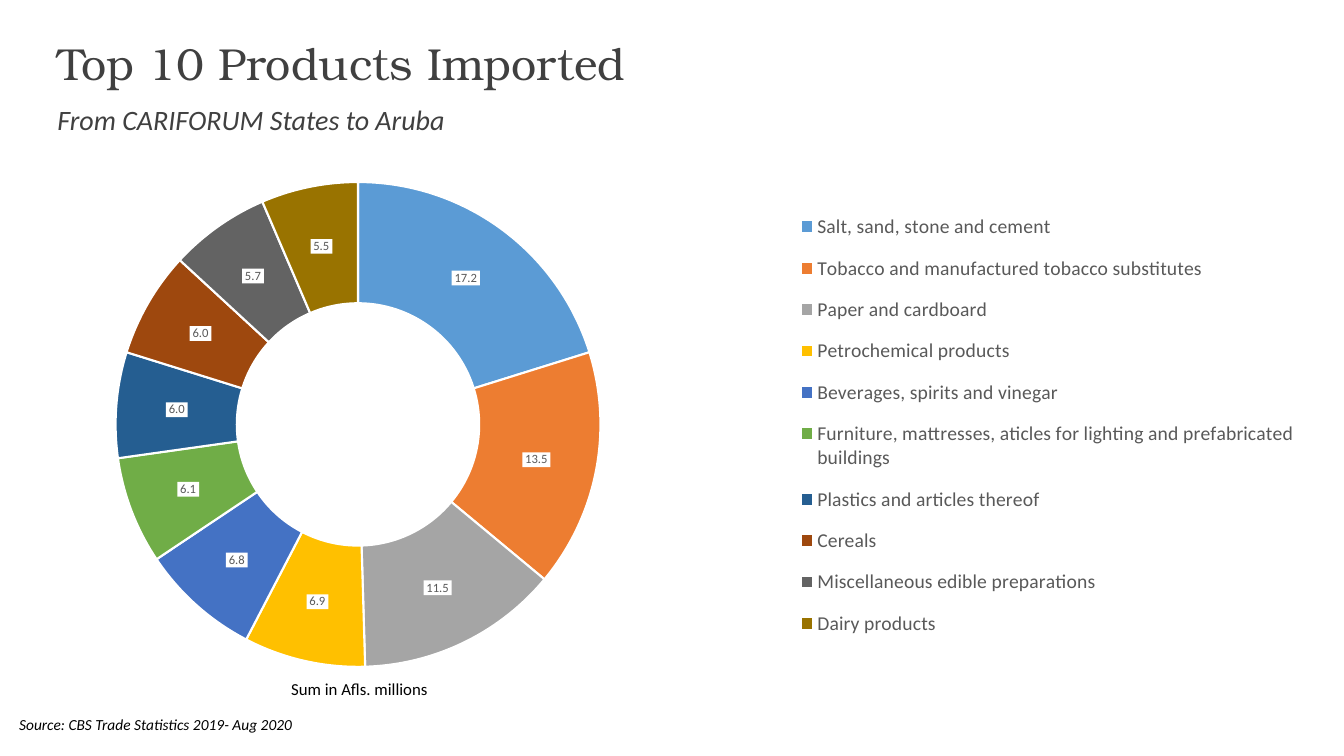
from dataclasses import dataclass

import lxml.etree
import pptx
import pptx.chart.chart
import pptx.chart.data
import pptx.dml.color
import pptx.enum.chart
import pptx.enum.text
import pptx.oxml
import pptx.oxml.ns
import pptx.slide
import pptx.text.text
import pptx.util

Pt = pptx.util.Pt
RGBColor = pptx.dml.color.RGBColor

BLACK = RGBColor(0x00, 0x00, 0x00)
WHITE = RGBColor(0xFF, 0xFF, 0xFF)
DARK_GREY = RGBColor(0x40, 0x40, 0x40)
MID_GREY = RGBColor(0x59, 0x59, 0x59)
BODY_FONT = "Calibri"
TITLE_FONT = "TeX Gyre Bonum"
MILLIONS_FORMAT = r'_(* #,##0.0_);_(* \(#,##0.0\);_(* "-"??_);_(@_)'


@dataclass(frozen=True)
class Product:
    name: str
    millions: float
    color: RGBColor


@dataclass(frozen=True)
class Caption:
    text: str
    left: float
    top: float
    width: float
    height: float
    size: float
    color: RGBColor
    italic: bool = True
    inset_x: float = 0
    inset_y: float = 0


PRODUCTS = [
    Product("Salt, sand, stone and cement", 17.2, RGBColor(0x5B, 0x9B, 0xD5)),
    Product("Tobacco and manufactured tobacco substitutes", 13.5, RGBColor(0xED, 0x7D, 0x31)),
    Product("Paper and cardboard", 11.5, RGBColor(0xA5, 0xA5, 0xA5)),
    Product("Petrochemical products", 6.9, RGBColor(0xFF, 0xC0, 0x00)),
    Product("Beverages, spirits and vinegar", 6.8, RGBColor(0x44, 0x72, 0xC4)),
    Product("Furniture, mattresses, aticles for lighting and prefabricated buildings",
            6.1, RGBColor(0x70, 0xAD, 0x47)),
    Product("Plastics and articles thereof", 6, RGBColor(0x25, 0x5E, 0x91)),
    Product("Cereals", 6, RGBColor(0x9E, 0x48, 0x0E)),
    Product("Miscellaneous edible preparations", 5.7, RGBColor(0x63, 0x63, 0x63)),
    Product("Dairy products", 5.5, RGBColor(0x99, 0x73, 0x00)),
]

CAPTIONS = [
    Caption("From CARIFORUM States to Aruba", 41, 73.4, 291, 34, 20, DARK_GREY),
    Caption("Source: CBS Trade Statistics 2019- Aug 2020", 13.7, 510.5, 379, 18, 11, BLACK),
    Caption("Sum in Afls. millions", 200.9, 481, 191.5, 21.6, 12, BLACK,
            italic=False, inset_x=7.2, inset_y=3.6),
]


def style_font(font: pptx.text.text.Font, size: float, color: RGBColor,
               name: str = BODY_FONT) -> None:
    font.name = name
    font.size = Pt(size)
    font.color.rgb = color


def add_title(slide: pptx.slide.Slide) -> None:
    title = slide.shapes.title
    title.left, title.top, title.width, title.height = Pt(34), Pt(34), Pt(893), Pt(34)
    frame = title.text_frame
    frame.vertical_anchor = pptx.enum.text.MSO_ANCHOR.BOTTOM
    frame.auto_size = pptx.enum.text.MSO_AUTO_SIZE.NONE
    heading = frame.paragraphs[0]
    heading.alignment = pptx.enum.text.PP_ALIGN.LEFT
    heading.line_spacing = 0.9
    run = heading.add_run()
    run.text = "Top 10 Products Imported"
    style_font(run.font, 32, DARK_GREY, TITLE_FONT)


def add_caption(slide: pptx.slide.Slide, caption: Caption) -> None:
    frame = slide.shapes.add_textbox(Pt(caption.left), Pt(caption.top),
                                     Pt(caption.width), Pt(caption.height)).text_frame
    frame.word_wrap = True
    frame.margin_left = frame.margin_right = Pt(caption.inset_x)
    frame.margin_top = frame.margin_bottom = Pt(caption.inset_y)
    run = frame.paragraphs[0].add_run()
    run.text = caption.text
    run.font.italic = caption.italic
    style_font(run.font, caption.size, caption.color)


def manual_layout(x: float, y: float, w: float, h: float,
                  inner: bool = False) -> lxml.etree.ElementBase:
    """Return a chart layout placed by fractions of the chart area."""
    target = '<c:layoutTarget val="inner"/>' if inner else ""
    return pptx.oxml.parse_xml(
        f'<c:layout {pptx.oxml.ns.nsdecls("c")}><c:manualLayout>{target}'
        '<c:xMode val="edge"/><c:yMode val="edge"/>'
        f'<c:x val="{x}"/><c:y val="{y}"/><c:w val="{w}"/><c:h val="{h}"/>'
        '</c:manualLayout></c:layout>')


def place_parts(chart: pptx.chart.chart.Chart) -> None:
    """Set the ring, its hole, the legend area and the white label boxes."""
    root = chart.element
    for layout in root.xpath(".//c:plotArea/c:layout | .//c:legend/c:layout"):
        layout.getparent().remove(layout)
    root.xpath(".//c:plotArea")[0].insert(0, manual_layout(0.076, 0.042, 0.374, 0.863, True))
    root.xpath(".//c:legendPos")[0].addnext(manual_layout(0.6, 0.07, 0.39, 0.81))
    root.xpath(".//c:holeSize")[0].set("val", "70")
    root.xpath(".//c:ser/c:dLbls/c:numFmt")[0].addnext(pptx.oxml.parse_xml(
        f'<c:spPr {pptx.oxml.ns.nsdecls("c", "a")}><a:solidFill>'
        f'<a:srgbClr val="{WHITE}"/></a:solidFill></c:spPr>'))


def add_imports_chart(slide: pptx.slide.Slide) -> None:
    imports = pptx.chart.data.CategoryChartData()
    imports.categories = [product.name for product in PRODUCTS]
    imports.add_series("Series 1", [product.millions for product in PRODUCTS])
    chart = slide.shapes.add_chart(pptx.enum.chart.XL_CHART_TYPE.DOUGHNUT,
                                   Pt(12.2), Pt(113), Pt(926), Pt(401.8), imports).chart
    style_font(chart.font, 10, BLACK)
    chart.has_title = False
    chart.has_legend = True
    chart.legend.position = pptx.enum.chart.XL_LEGEND_POSITION.RIGHT
    chart.legend.include_in_layout = False
    style_font(chart.legend.font, 14, MID_GREY)

    ring = chart.plots[0]
    ring.vary_by_categories = True
    millions = ring.series[0]
    for index, product in enumerate(PRODUCTS):
        slice_format = millions.points[index].format
        slice_format.fill.solid()
        slice_format.fill.fore_color.rgb = product.color
        slice_format.line.color.rgb = WHITE
        slice_format.line.width = Pt(1.5)

    labels = millions.data_labels
    labels.show_value = True
    labels.number_format = MILLIONS_FORMAT
    labels.number_format_is_linked = False
    style_font(labels.font, 9, MID_GREY)
    place_parts(chart)


def main() -> None:
    deck = pptx.Presentation()
    deck.slide_width, deck.slide_height = Pt(960), Pt(540)
    slide = deck.slides.add_slide(deck.slide_layouts.get_by_name("Title Only"))
    add_title(slide)
    add_imports_chart(slide)
    for caption in CAPTIONS:
        add_caption(slide, caption)
    deck.save("out.pptx")


if __name__ == "__main__":
    main()
